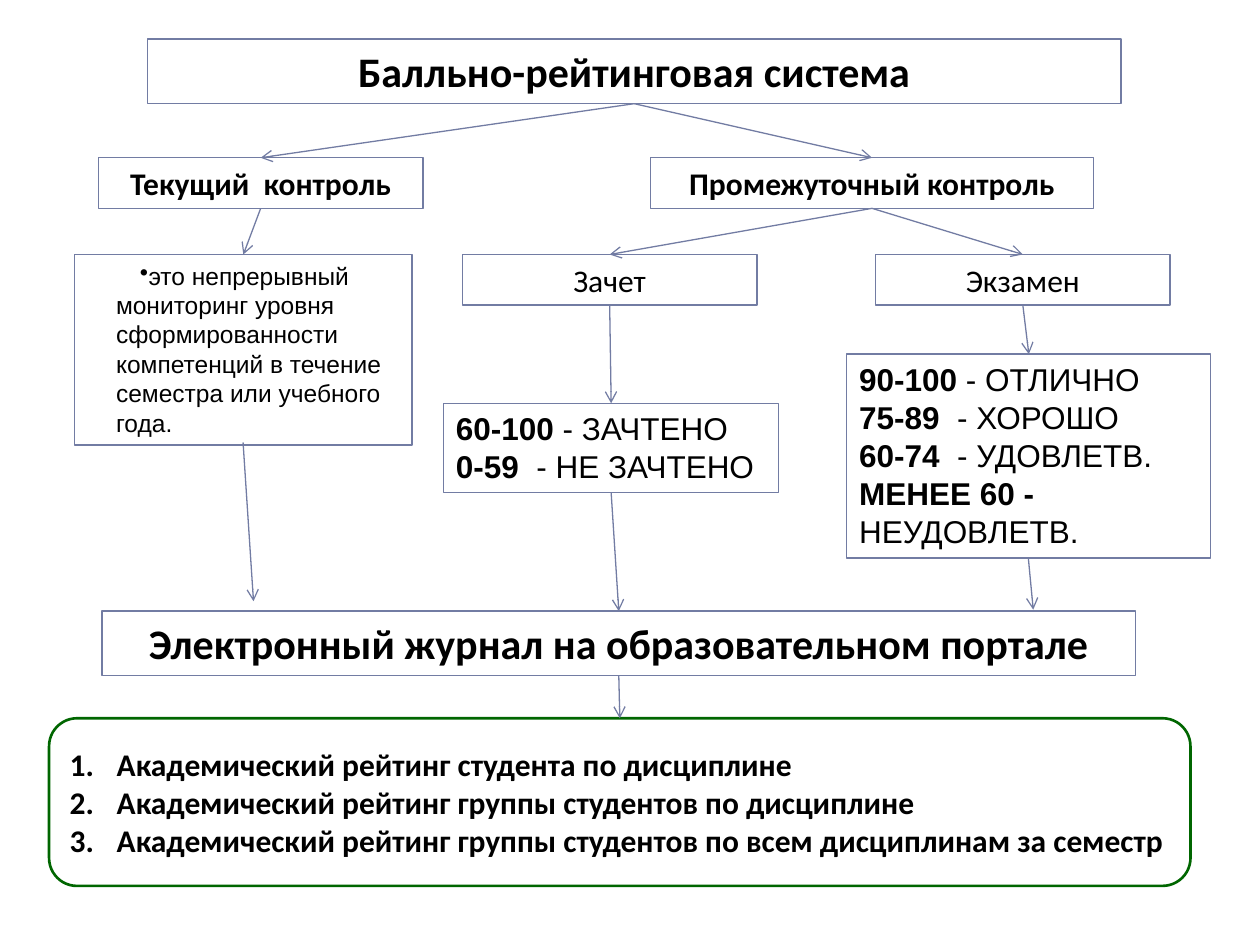
from lxml.etree import SubElement
from pptx import Presentation
from pptx.dml.color import RGBColor
from pptx.enum.shapes import MSO_CONNECTOR, MSO_SHAPE
from pptx.enum.text import MSO_ANCHOR, MSO_AUTO_SIZE, PP_ALIGN
from pptx.oxml.ns import qn
from pptx.util import Cm, Pt

COLOURS = {"text": "000000", "line": "727CA3", "rating": "006600"}
TOP, BOTTOM = 0, 2  # connection sites of a rectangle


def colour(name):
    return RGBColor.from_string(COLOURS[name])


def add_box(page, left, top, width, height, preset=MSO_SHAPE.RECTANGLE,
            line="line", weight=0.75):
    box = page.shapes.add_shape(preset, Cm(left), Cm(top), Cm(width), Cm(height))
    box.shadow.inherit = False
    box.fill.background()
    box.line.color.rgb = colour(line)
    box.line.width = Pt(weight)
    frame = box.text_frame
    frame.word_wrap = True
    frame.vertical_anchor = MSO_ANCHOR.TOP
    frame.auto_size = MSO_AUTO_SIZE.SHAPE_TO_FIT_TEXT
    return box


def add_paragraph(box, number, size, font, bold=None, align=PP_ALIGN.LEFT):
    """Return paragraph `number` of the box, adding it if it is not the first."""
    frame = box.text_frame
    para = frame.paragraphs[0] if number == 0 else frame.add_paragraph()
    para.alignment = align
    para.font.size = Pt(size)
    para.font.name = font
    para.font.bold = bold
    para.font.color.rgb = colour("text")
    return para


def set_bullet(para, margin, indent, tag, **attributes):
    properties = para._p.get_or_add_pPr()
    properties.set("marL", str(Cm(margin)))
    properties.set("indent", str(Cm(indent)))
    bullet = properties.makeelement(qn(tag), attributes)
    properties.insert_element_before(bullet, "a:tabLst", "a:defRPr", "a:extLst")


def add_heading(page, text, size, bold, *place):
    box = add_box(page, *place)
    para = add_paragraph(box, 0, size, "Calibri", bold, PP_ALIGN.CENTER)
    para.add_run().text = text
    return box


def add_note(page, text, *place):
    box = add_box(page, *place)
    box.text_frame.margin_left = Cm(0.84)
    para = add_paragraph(box, 0, 14, "Arial")
    para.add_run().text = text
    set_bullet(para, 0, 0.48, "a:buChar", char="•")
    return box


def add_grades(page, grades, *place):
    """Add a box with a bold score and a plain grade on each line."""
    box = add_box(page, *place)
    for number, parts in enumerate(grades):
        para = add_paragraph(box, number, 18, "Arial")
        for text, bold in zip(parts, (True, False)):
            span = para.add_run()
            span.text = text
            span.font.bold = bold
    return box


def add_ratings(page, ratings, *place):
    box = add_box(page, *place, MSO_SHAPE.ROUNDED_RECTANGLE, "rating", 1.5)
    box.text_frame.auto_size = MSO_AUTO_SIZE.NONE
    box.text_frame.vertical_anchor = MSO_ANCHOR.MIDDLE
    for number, text in enumerate(ratings):
        para = add_paragraph(box, number, 18, "Calibri", True)
        para.add_run().text = text
        set_bullet(para, 0.95, -0.95, "a:buAutoNum", type="arabicPeriod")
    return box


def add_arrow(page, start=(0, 0), end=(0, 0)):
    arrow = page.shapes.add_connector(
        MSO_CONNECTOR.STRAIGHT, *(Cm(value) for value in (*start, *end)))
    arrow.line.color.rgb = colour("line")
    arrow.line.width = Pt(0.75)
    SubElement(arrow.line._get_or_add_ln(), qn("a:tailEnd"), type="arrow")
    SubElement(arrow._element.spPr, qn("a:effectLst"))
    return arrow


def link(page, upper, lower):
    """Glue an arrow from the bottom of one box to the top of another."""
    arrow = add_arrow(page)
    arrow.begin_connect(upper, BOTTOM)
    arrow.end_connect(lower, TOP)


def main():
    deck = Presentation()
    deck.slide_width, deck.slide_height = Cm(25.4), Cm(19.05)
    page = deck.slides.add_slide(deck.slide_layouts[6])

    system = add_heading(page, "Балльно-рейтинговая система", 24, True,
                         2.97, 0.79, 19.63, 1.3)
    current = add_heading(page, "Текущий  контроль", 18, True,
                          1.98, 3.18, 6.55, 1.02)
    interim = add_heading(page, "Промежуточный контроль", 18, True,
                          13.11, 3.18, 8.94, 1.02)
    monitoring = add_note(
        page, "это непрерывный мониторинг уровня сформированности "
        "компетенций в течение семестра или учебного года.",
        1.5, 5.13, 6.81, 3.84)
    credit = add_heading(page, "Зачет", 18, False, 9.32, 5.13, 5.94, 1.02)
    exam = add_heading(page, "Экзамен", 18, False, 17.65, 5.13, 5.94, 1.02)
    journal = add_heading(page, "Электронный журнал на образовательном портале",
                          24, True, 2.06, 12.32, 20.83, 1.3)
    credit_grades = add_grades(
        page, [("60-100", " - ЗАЧТЕНО"), ("0-59", "  - НЕ ЗАЧТЕНО")],
        8.94, 8.13, 6.76, 1.8)
    exam_grades = add_grades(
        page, [("90-100 ", "- ОТЛИЧНО"), ("75-89", "  - ХОРОШО"),
               ("60-74", "  - УДОВЛЕТВ."), ("МЕНЕЕ 60 - ", "НЕУДОВЛЕТВ.")],
        17.07, 7.14, 7.34, 4.11)
    ratings = add_ratings(
        page, ["Академический рейтинг студента по дисциплине",
               "Академический рейтинг группы студентов по дисциплине",
               "Академический рейтинг группы студентов по всем дисциплинам за семестр"],
        0.99, 14.48, 23.01, 3.38)

    for upper, lower in [
            (system, current), (system, interim), (current, monitoring),
            (interim, credit), (interim, exam), (credit, credit_grades),
            (exam, exam_grades), (credit_grades, journal), (journal, ratings)]:
        link(page, upper, lower)
    add_arrow(page, (4.9, 8.92), (5.11, 12.12))
    add_arrow(page, (20.73, 11.25), (20.83, 12.29))

    deck.save("out.pptx")


if __name__ == "__main__":
    main()
